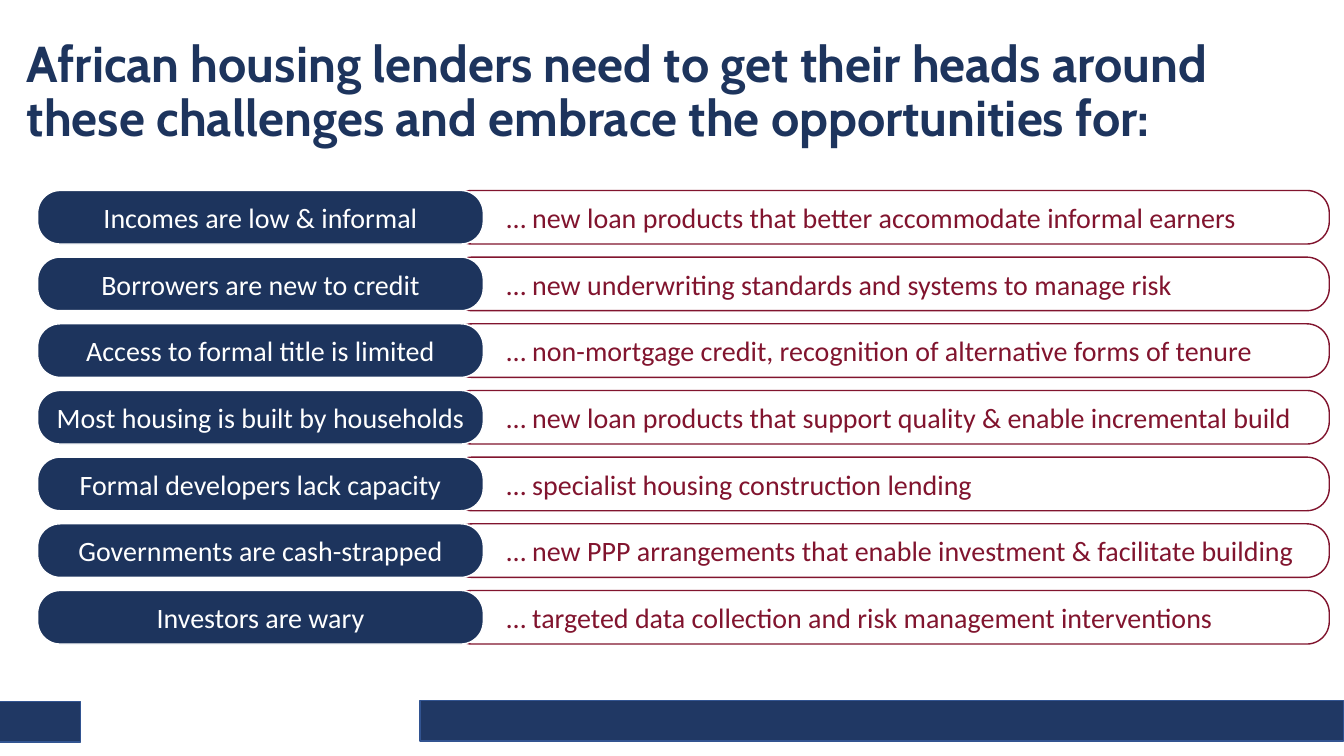
from pptx import Presentation
from pptx.dml.color import RGBColor
from pptx.enum import shapes, text
from pptx.util import Cm, Pt

NAVY = RGBColor(0x1D, 0x34, 0x5D)
BAR = RGBColor(0x20, 0x38, 0x64)
BAR_EDGE = RGBColor(0x32, 0x54, 0x91)
MAROON = RGBColor(0x81, 0x14, 0x2E)
WHITE = RGBColor(0xFF, 0xFF, 0xFF)

TITLE = ("African housing lenders need to get their heads around "
         "these challenges and embrace the opportunities for:")
ROWS = [
    ("Incomes are low & informal",
     "… new loan products that better accommodate informal earners"),
    ("Borrowers are new to credit",
     "… new underwriting standards and systems to manage risk"),
    ("Access to formal title is limited",
     "… non-mortgage credit, recognition of alternative forms of tenure"),
    ("Most housing is built by households",
     "… new loan products that support quality & enable incremental build"),
    ("Formal developers lack capacity",
     "… specialist housing construction lending"),
    ("Governments are cash-strapped",
     "… new PPP arrangements that enable investment & facilitate building"),
    ("Investors are wary",
     "… targeted data collection and risk management interventions"),
]
ROW_TOP, ROW_PITCH, ROW_HEIGHT = 4.8, 1.68, 1.35


def add_box(s, kind, left, top, width, height, fill, line):
    sp = s.shapes.add_shape(kind, Cm(left), Cm(top), Cm(width), Cm(height))
    sp.shadow.inherit = False
    if fill is None:
        sp.fill.background()
    else:
        sp.fill.solid()
        sp.fill.fore_color.rgb = fill
    sp.line.color.rgb = line
    sp.line.width = Pt(1)
    return sp


def set_text(sp, words, font, size, color, align, bold=False):
    tf = sp.text_frame
    tf.word_wrap = True
    tf.vertical_anchor = text.MSO_ANCHOR.MIDDLE
    tf.text = words
    p = tf.paragraphs[0]
    p.alignment = align
    r = p.runs[0]
    r.font.name = font
    r.font.size = Pt(size)
    r.font.bold = bold
    r.font.color.rgb = color
    return p


def add_title(s):
    sp = s.shapes.add_textbox(Cm(0.43), Cm(0.51), Cm(33.43), Cm(3.68))
    p = set_text(sp, TITLE, "Cabin", 36, NAVY, text.PP_ALIGN.LEFT, True)
    p.line_spacing = 0.9


def add_pill(s, left, top, width, words, fill, line, color, align):
    sp = add_box(s, shapes.MSO_SHAPE.ROUNDED_RECTANGLE,
                 left, top, width, ROW_HEIGHT, fill, line)
    sp.adjustments[0] = 0.42
    set_text(sp, words, "Calibri", 20, color, align)
    return sp


def add_row(s, top, challenge, opportunity):
    sp = add_pill(s, 11.33, top, 22.17, opportunity,
                  None, MAROON, MAROON, text.PP_ALIGN.LEFT)
    sp.text_frame.margin_left = Cm(1.27)
    add_pill(s, 0.95, top, 11.23, challenge,
             NAVY, WHITE, WHITE, text.PP_ALIGN.CENTER)


def main():
    prs = Presentation()
    prs.slide_width, prs.slide_height = Cm(33.87), Cm(19.05)
    s = prs.slides.add_slide(prs.slide_layouts[6])
    for left, top, width in [(10.59, 17.65, 23.27), (-0.03, 17.68, 2.06)]:
        add_box(s, shapes.MSO_SHAPE.RECTANGLE, left, top, width, 1.02,
                BAR, BAR_EDGE)
    add_title(s)
    for i, (challenge, opportunity) in enumerate(ROWS):
        add_row(s, ROW_TOP + i * ROW_PITCH, challenge, opportunity)
    prs.save("out.pptx")


if __name__ == "__main__":
    main()
